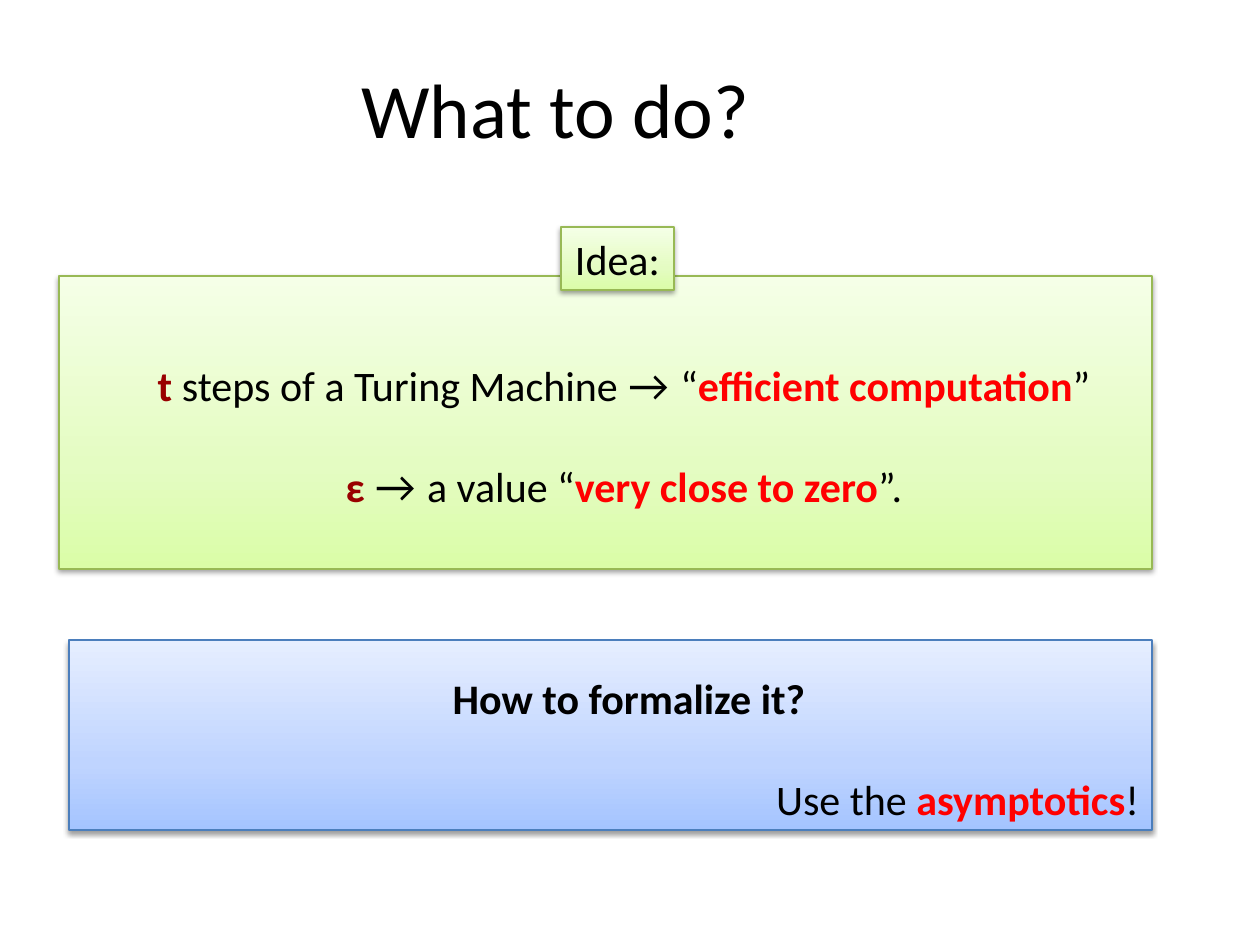
from pptx import Presentation
from pptx.dml.color import RGBColor
from pptx.enum.shapes import MSO_SHAPE
from pptx.enum.text import MSO_ANCHOR, PP_ALIGN
from pptx.oxml import parse_xml
from pptx.oxml.ns import nsdecls
from pptx.util import Pt

SCALE = 914400 / 126
COLORS = {"black": "000000", "red": "FF0000", "dark": "990000",
          "green": "98B955", "blue": "4B7EBC"}
FADES = {"green": ("DAFDA7", "E4FCC2", "F5FFE7"),
         "blue": ("A4C4FF", "BFD4FF", "E6EEFF")}
STOPS = (0, 35, 100)
INSETS = (50, 32, 13, 6)
ARROW = ("→ ", "black", False, "Lato")


def px(n):
    return round(n * SCALE)


def rgb(name):
    return RGBColor.from_string(COLORS[name])


def plain(text):
    return text, "black", False, None


def strong(text, color="red"):
    return text, color, True, None


def write(para, runs, size=24, align=PP_ALIGN.CENTER):
    """Fill a paragraph from (text, color, bold, font) runs."""
    para.alignment = align
    para.font.name, para.font.size = "Calibri", Pt(size)
    para.font.color.rgb = rgb("black")
    for text, color, bold, face in runs:
        run = para.add_run()
        run.text = text
        run.font.bold = bold
        run.font.color.rgb = rgb(color)
        if face:
            run.font.name = face


def add_title(slide, text):
    box = slide.shapes.add_textbox(px(39), px(29), px(1033), px(158))
    frame = box.text_frame
    frame.word_wrap = True
    frame.vertical_anchor = MSO_ANCHOR.MIDDLE
    write(frame.paragraphs[0], [plain(text)], 44)


def add_box(slide, area, hue):
    """Add a rectangle with an upward fade and a soft shadow."""
    box = slide.shapes.add_shape(MSO_SHAPE.RECTANGLE, *map(px, area))
    stops = "".join(
        f'<a:gs pos="{pos * 1000}"><a:srgbClr val="{color}"/></a:gs>'
        for pos, color in zip(STOPS, FADES[hue]))
    props = box._element.spPr
    props.append(parse_xml(
        f'<a:gradFill {nsdecls("a")} rotWithShape="1"><a:gsLst>{stops}</a:gsLst>'
        '<a:lin ang="16200000" scaled="0"/></a:gradFill>'))
    box.line.color.rgb = rgb(hue)
    box.line.width = Pt(0.75)
    props.append(parse_xml(
        f'<a:effectLst {nsdecls("a")}><a:outerShdw blurRad="{Pt(3.1)}" '
        f'dist="{Pt(1.6)}" dir="5400000" rotWithShape="0"><a:srgbClr val="000000">'
        '<a:alpha val="38000"/></a:srgbClr></a:outerShdw></a:effectLst>'))
    return box


def add_panel(slide, area, hue, lines):
    """Add a box with one spaced paragraph per (runs, align) line."""
    frame = add_box(slide, area, hue).text_frame
    frame.word_wrap = True
    frame.vertical_anchor = MSO_ANCHOR.MIDDLE
    (frame.margin_left, frame.margin_top,
     frame.margin_right, frame.margin_bottom) = map(px, INSETS)
    for i, (runs, align) in enumerate(lines):
        para = frame.add_paragraph() if i else frame.paragraphs[0]
        write(para, runs, align=align)
        if i:
            para.space_before = Pt(29)


def add_label(slide, area, hue, text):
    frame = add_box(slide, area, hue).text_frame
    frame.word_wrap = False
    frame.vertical_anchor = MSO_ANCHOR.TOP
    write(frame.paragraphs[0], [plain(text)])


def main():
    deck = Presentation()
    deck.slide_width, deck.slide_height = px(1260), px(945)
    slide = deck.slides.add_slide(deck.slide_layouts[6])
    mid, right = PP_ALIGN.CENTER, PP_ALIGN.RIGHT
    add_title(slide, "What to do?")
    add_panel(slide, (59, 276, 1093, 293), "green", [
        ([strong("t", "dark"), plain(" steps of a Turing Machine "), ARROW,
          plain("“"), strong("efficient computation"), plain("”")], mid),
        ([strong("ε ", "dark"), ARROW, plain("a value “"),
          strong("very close to zero"), plain("”.")], mid)])
    add_panel(slide, (69, 640, 1083, 190), "blue", [
        ([strong("How to formalize it?", "black")], mid),
        ([plain("Use the "), strong("asymptotics"), plain("!")], right)])
    add_label(slide, (561, 227, 113, 63), "green", "Idea:")
    deck.save("out.pptx")


if __name__ == "__main__":
    main()
